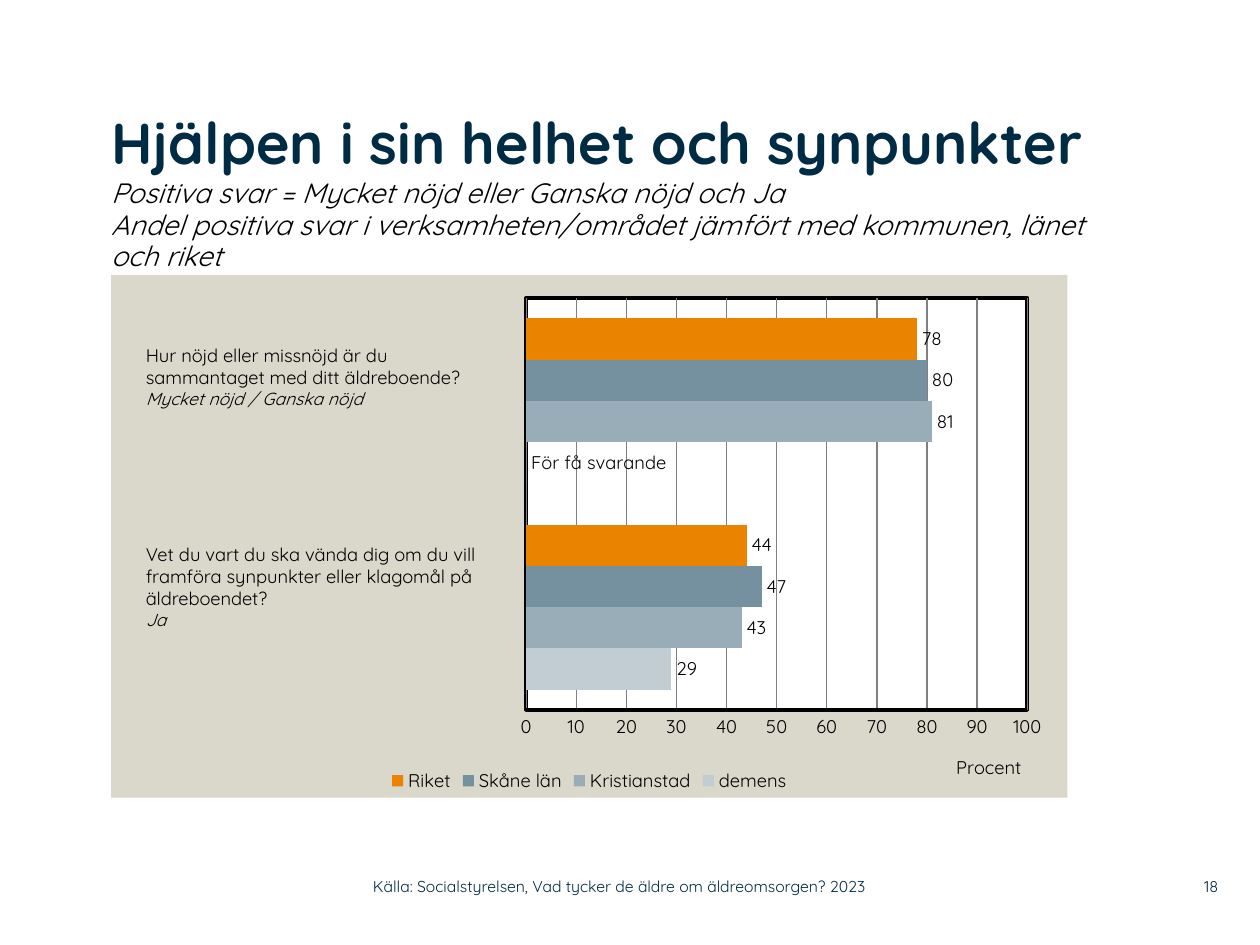
from lxml import etree
from pptx import Presentation
from pptx.chart.data import CategoryChartData
from pptx.dml.color import RGBColor
from pptx.enum.chart import (XL_CHART_TYPE, XL_LABEL_POSITION, XL_LEGEND_POSITION,
                             XL_TICK_MARK)
from pptx.enum.text import MSO_ANCHOR, MSO_AUTO_SIZE, PP_ALIGN
from pptx.oxml import parse_xml
from pptx.oxml.ns import nsdecls, qn
from pptx.util import Cm, Pt

BAR = XL_CHART_TYPE.BAR_CLUSTERED
OUTSIDE = XL_LABEL_POSITION.OUTSIDE_END
LEGEND_BOTTOM = XL_LEGEND_POSITION.BOTTOM
NO_TICK = XL_TICK_MARK.NONE
TOP, MIDDLE, BOTTOM = MSO_ANCHOR.TOP, MSO_ANCHOR.MIDDLE, MSO_ANCHOR.BOTTOM
LEFT, RIGHT = PP_ALIGN.LEFT, PP_ALIGN.RIGHT

NAVY, BLACK, SAND, GREY = "002B45", "000000", "DAD7CB", "808080"
CATEGORIES = ["1", "2"]
SERIES = [
    ("demens", (29, 0), "C2CDD3"),
    ("Kristianstad", (43, 81), "99ADB9"),
    ("Skåne län", (47, 80), "75909F"),
    ("Riket", (44, 78), "E98300"),
]
BODY = {"size": Pt(10.5)}
ANSWER = {"size": Pt(10), "italic": True}


def rgb(value):
    return RGBColor.from_string(value)


def set_layout(parent, index, **values):
    """Give a chart element a manual layout as fractions of the chart."""
    layout = parent.find(qn("c:layout"))
    if layout is None:
        layout = etree.Element(qn("c:layout"))
        parent.insert(index, layout)
    manual = etree.SubElement(layout, qn("c:manualLayout"))
    for tag, value in values.items():
        etree.SubElement(manual, qn(f"c:{tag}")).set("val", str(value))


def area_format(fill, line):
    return parse_xml(
        f'<c:spPr {nsdecls("c", "a")}><a:solidFill><a:srgbClr val="{fill}"/>'
        f'</a:solidFill>{line}</c:spPr>')


class Deck:
    font = "Quicksand"

    def __init__(self, width, height):
        self.prs = Presentation()
        self.prs.slide_width, self.prs.slide_height = Cm(width), Cm(height)

    def add_slide(self):
        self.s = self.prs.slides.add_slide(self.prs.slide_layouts[5])

    def format(self, font, color=BLACK, **values):
        font.name = self.font
        font.color.rgb = rgb(color)
        for name, value in values.items():
            setattr(font, name, value)

    def frame(self, tf, anchor, inset=None):
        tf.auto_size = MSO_AUTO_SIZE.NONE
        tf.word_wrap = True
        tf.vertical_anchor = anchor
        if inset is not None:
            for side in ("left", "top", "right", "bottom"):
                setattr(tf, f"margin_{side}", Cm(inset))

    def title(self, box, heading, lines):
        sp = self.s.shapes.title
        sp.left, sp.top, sp.width, sp.height = map(Cm, box)
        self.frame(sp.text_frame, BOTTOM, 0)
        p = sp.text_frame.paragraphs[0]
        p.alignment = LEFT
        p.line_spacing = 0.95
        r = p.add_run()
        r.text = heading
        self.format(r.font, NAVY, size=Pt(33), bold=True)
        for line in lines:
            p.add_line_break()
            r = p.add_run()
            r.text = line
            self.format(r.font, size=Pt(16), bold=False, italic=True)

    def text(self, box, lines, anchor=TOP, inset=None, align=LEFT):
        tf = self.s.shapes.add_textbox(*map(Cm, box)).text_frame
        self.frame(tf, anchor, inset)
        for i, (line, style) in enumerate(lines):
            p = tf.paragraphs[0] if i == 0 else tf.add_paragraph()
            p.alignment = align
            r = p.add_run()
            r.text = line
            self.format(r.font, **style)

    def bar_chart(self, box, categories, series, axis_title):
        data = CategoryChartData()
        data.categories = categories
        for name, values, _ in series:
            data.add_series(name, values)
        chart = self.s.shapes.add_chart(BAR, *map(Cm, box), data).chart
        chart.has_title = False
        self.format(chart.font, **BODY)

        chart.has_legend = True
        chart.legend.position = LEGEND_BOTTOM
        chart.legend.include_in_layout = False
        self.format(chart.legend.font, **BODY)

        plot = chart.plots[0]
        plot.gap_width, plot.overlap, plot.vary_by_categories = 100, 0, False
        for ser, (_, _, color) in zip(plot.series, series):
            ser.format.fill.solid()
            ser.format.fill.fore_color.rgb = rgb(color)
            labels = ser.data_labels
            labels.show_value = True
            labels.position = OUTSIDE
            self.format(labels.font, **BODY)

        chart.category_axis.visible = False
        axis = chart.value_axis
        axis.minimum_scale, axis.maximum_scale, axis.major_unit = 0, 100, 10
        axis.major_tick_mark = axis.minor_tick_mark = NO_TICK
        axis.format.line.color.rgb = rgb(BLACK)
        axis.format.line.width = Pt(2)
        axis.major_gridlines.format.line.color.rgb = rgb(GREY)
        axis.major_gridlines.format.line.width = Pt(0.75)
        self.format(axis.tick_labels.font, **BODY)

        r = axis.axis_title.text_frame.paragraphs[0].add_run()
        r.text = axis_title
        self.format(r.font, bold=False, **BODY)
        set_layout(axis.axis_title._element, 1, xMode="edge", yMode="edge",
                   x=0.88, y=0.91)

        root = chart._chartSpace.find(qn("c:chart"))
        area = root.find(qn("c:plotArea"))
        set_layout(area, 0, layoutTarget="inner", xMode="edge", yMode="edge",
                   x=0.434, y=0.044, w=0.524, h=0.789)
        border = (f'<a:ln w="{Pt(2)}"><a:solidFill><a:srgbClr val="{BLACK}"/>'
                  '</a:solidFill></a:ln>')
        area.append(area_format("FFFFFF", border))
        root.addnext(area_format(SAND, "<a:ln><a:noFill/></a:ln>"))
        return chart

    def point_label(self, chart, series, point, text):
        label = chart.plots[0].series[series].points[point].data_label
        r = label.text_frame.paragraphs[0].add_run()
        r.text = text
        self.format(r.font, **BODY)
        label.position = OUTSIDE


def main():
    deck = Deck(25.4, 19.05)
    deck.add_slide()
    chart = deck.bar_chart((2.24, 5.54, 19.28, 10.54), CATEGORIES, SERIES, "Procent")
    deck.point_label(chart, 0, 1, "För få svarande")
    deck.title((2.24, 2.11, 19.79, 3.4), "Hjälpen i sin helhet och synpunkter", [
        "Positiva svar = Mycket nöjd eller Ganska nöjd och Ja",
        "Andel positiva svar i verksamheten/området jämfört med kommunen, "
        "länet och riket",
    ])
    deck.text((2.69, 6.81, 7.87, 2.06), [
        ("Hur nöjd eller missnöjd är du", BODY),
        ("sammantaget med ditt äldreboende?", BODY),
        ("Mycket nöjd / Ganska nöjd", ANSWER),
    ])
    deck.text((2.69, 10.82, 7.75, 2.06), [
        ("Vet du vart du ska vända dig om du vill framföra synpunkter eller "
         "klagomål på äldreboendet?", BODY),
        ("Ja", ANSWER),
    ])
    footer = {"size": Pt(9), "color": NAVY}
    deck.text((23.37, 17.5, 1.19, 0.74), [("18", footer)], MIDDLE, 0, RIGHT)
    deck.text((7.52, 17.5, 11.25, 0.74), [
        ("Källa: Socialstyrelsen, Vad tycker de äldre om äldreomsorgen? 2023", footer),
    ], MIDDLE, 0)
    deck.prs.save("out.pptx")


if __name__ == "__main__":
    main()
